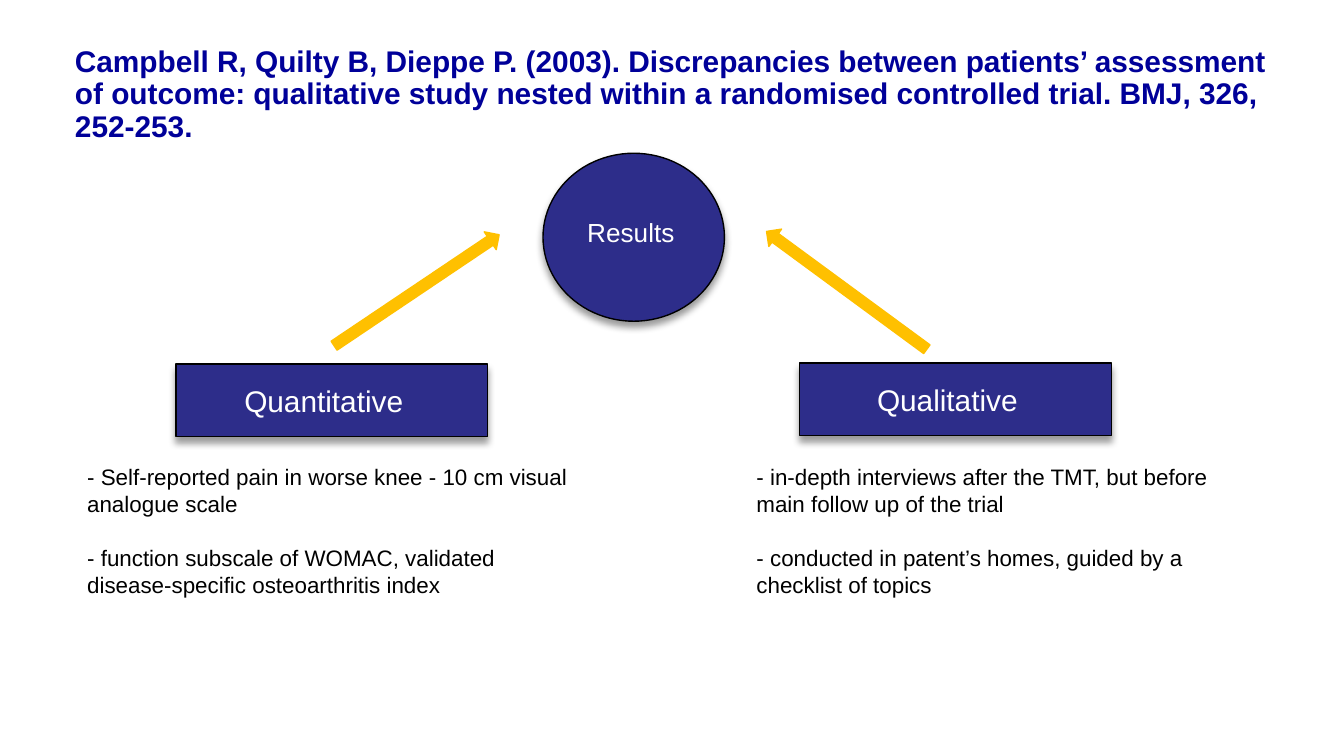
from lxml import etree
from pptx import Presentation
from pptx.dml.color import RGBColor
from pptx.enum.shapes import MSO_SHAPE
from pptx.enum.text import MSO_ANCHOR, PP_ALIGN
from pptx.oxml.ns import qn
from pptx.util import Inches, Pt

RECTANGLE = MSO_SHAPE.RECTANGLE
ELLIPSE = MSO_SHAPE.OVAL
ARROW = MSO_SHAPE.RIGHT_ARROW
MIDDLE = MSO_ANCHOR.MIDDLE
CENTER = PP_ALIGN.CENTER

FONT = "Arial"
NAVY, TITLE_BLUE, GOLD = "2D2D8A", "000099", "FFC000"
BLACK, WHITE = "000000", "FFFFFF"

TITLE = (
    "Campbell R, Quilty B, Dieppe P. (2003). Discrepancies between patients’ "
    "assessment of outcome: qualitative study nested within a randomised "
    "controlled trial. BMJ, 326, 252-253."
)
QUANTITATIVE_NOTES = [
    "- Self-reported pain in worse knee - 10 cm visual analogue scale",
    "- function subscale of WOMAC, validated disease-specific osteoarthritis index",
]
QUALITATIVE_NOTES = [
    "- in-depth interviews after the TMT, but before main follow up of the trial",
    "- conducted in patent’s homes, guided by a checklist of topics",
]


def color(value):
    return RGBColor.from_string(value)


def style_text(paragraph, size, text_color, bold=False):
    for run in paragraph.runs:
        run.font.name = FONT
        run.font.size = Pt(size)
        run.font.bold = bold
        run.font.color.rgb = color(text_color)


def add_filled_shape(slide, kind, box, fill, line):
    shape = slide.shapes.add_shape(kind, *map(Inches, box))
    shape.shadow.inherit = False
    shape.fill.solid()
    shape.fill.fore_color.rgb = color(fill)
    shape.line.color.rgb = color(line)
    shape.line.width = Pt(0.75)
    return shape


def add_drop_shadow(shape):
    effects = shape._element.spPr.find(qn("a:effectLst"))
    shadow = etree.SubElement(
        effects, qn("a:outerShdw"), blurRad=str(Pt(4)), dist=str(Pt(3)),
        dir="5400000", rotWithShape="0",
    )
    shade = etree.SubElement(shadow, qn("a:srgbClr"), val=BLACK)
    etree.SubElement(shade, qn("a:alpha"), val="40000")


def add_node(slide, kind, box, label, size, shift_left, shift_up=0):
    """Add a shadowed shape whose label sits slightly off its centre."""
    shape = add_filled_shape(slide, kind, box, NAVY, BLACK)
    add_drop_shadow(shape)
    frame = shape.text_frame
    frame.text = label
    frame.vertical_anchor = MIDDLE
    frame.margin_right = Inches(0.1 + 2 * shift_left)
    frame.margin_bottom = Inches(0.05 + 2 * shift_up)
    paragraph = frame.paragraphs[0]
    paragraph.alignment = CENTER
    style_text(paragraph, size, WHITE)


def add_arrow(slide, box, rotation):
    arrow = add_filled_shape(slide, ARROW, box, GOLD, GOLD)
    arrow.rotation = rotation


def add_text(slide, box, lines, size, text_color, bold=False, gap=0, spacing=None):
    frame = slide.shapes.add_textbox(*map(Inches, box)).text_frame
    frame.word_wrap = True
    frame.text = "\n".join(lines)
    for index, paragraph in enumerate(frame.paragraphs):
        if index:
            paragraph.space_before = Pt(gap)
        if spacing:
            paragraph.line_spacing = spacing
        style_text(paragraph, size, text_color, bold)


def add_method(slide, node_box, label, notes_left, notes):
    add_node(slide, RECTANGLE, node_box, label, 16, shift_left=0.06)
    add_text(slide, (notes_left, 3.4, 3.78, 1.51), notes, 12, BLACK, gap=14.4)


def build_slide(presentation):
    slide = presentation.slides.add_slide(presentation.slide_layouts[6])
    add_text(slide, (0.46, 0.3, 9.07, 0.71), [TITLE], 16, TITLE_BLUE,
             bold=True, spacing=0.9)
    add_node(slide, ELLIPSE, (4.04, 1.14, 1.35, 1.25), "Results", 14,
             shift_left=0.02, shift_up=0.04)
    add_arrow(slide, (2.36, 2.08, 1.48, 0.16), 326.1)
    add_arrow(slide, (5.56, 2.08, 1.48, 0.16), 216.3)
    add_method(slide, (1.31, 2.71, 2.32, 0.54), "Quantitative",
               0.55, QUANTITATIVE_NOTES)
    add_method(slide, (5.95, 2.7, 2.32, 0.54), "Qualitative",
               5.53, QUALITATIVE_NOTES)


def main():
    presentation = Presentation()
    presentation.slide_width = Inches(10)
    presentation.slide_height = presentation.slide_width * 9 // 16
    build_slide(presentation)
    presentation.save("out.pptx")


if __name__ == "__main__":
    main()
